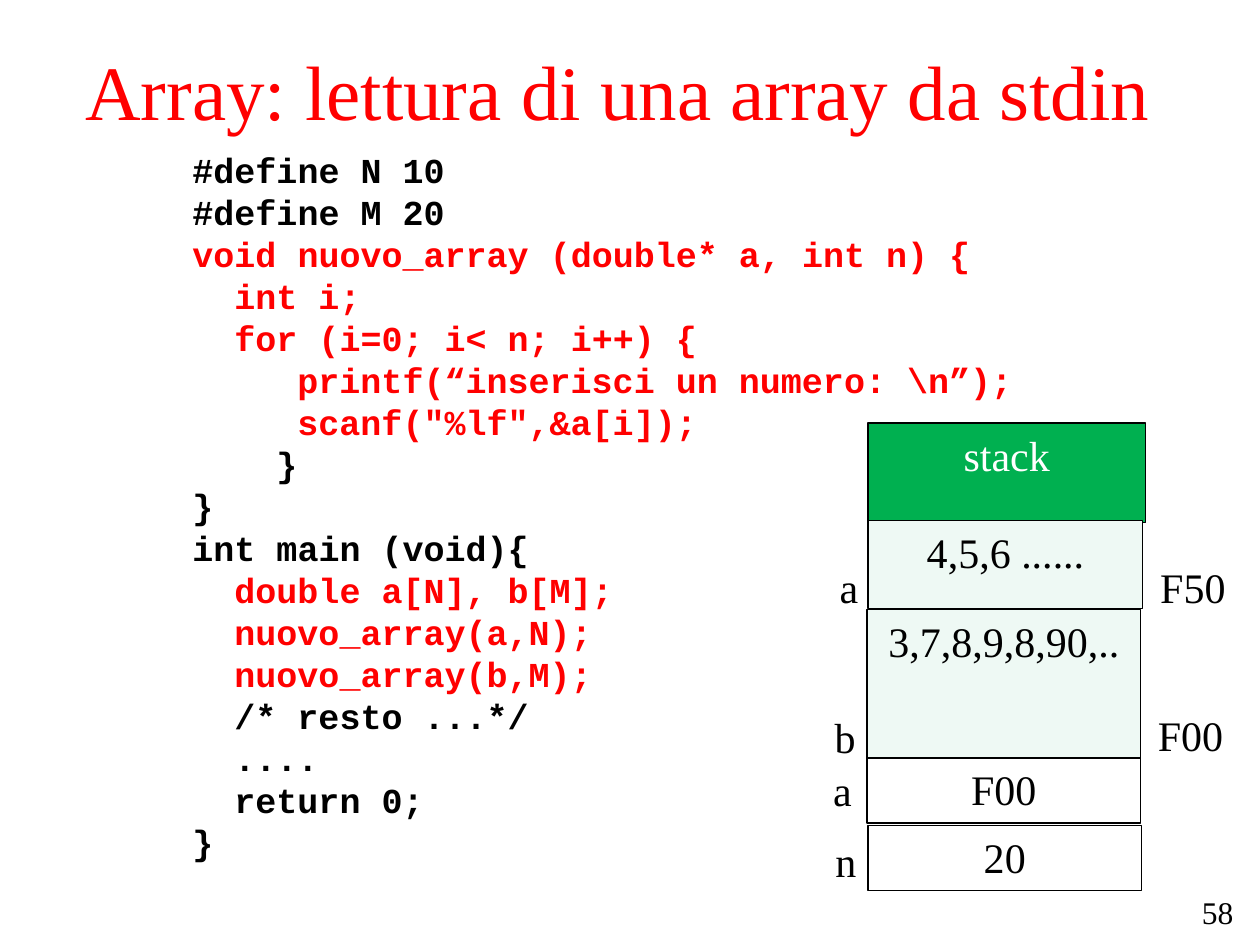
from pptx import Presentation
from pptx.dml.color import RGBColor
from pptx.enum.shapes import MSO_SHAPE
from pptx.enum.text import MSO_ANCHOR, PP_ALIGN
from pptx.util import Cm, Pt

COLOURS = {"black": "000000", "red": "FF0000", "white": "FFFFFF",
           "green": "00B050", "mint": "EEF9F4"}
SERIF, MONO = "Times New Roman", "Courier New"


def add_span(para, text, size, colour="black", font=SERIF):
    span = para.add_run()
    span.text = text
    span.font.name = font
    span.font.size = Pt(size)
    span.font.color.rgb = RGBColor.from_string(COLOURS[colour])
    return span


def add_text(page, place, text, size, align=PP_ALIGN.LEFT, colour="black"):
    box = page.shapes.add_textbox(*map(Cm, place))
    box.text_frame.word_wrap = True
    para = box.text_frame.paragraphs[0]
    para.alignment = align
    add_span(para, text, size, colour)
    return box


deck = Presentation()
deck.slide_width, deck.slide_height = Cm(25.4), Cm(19.05)
page = deck.slides.add_slide(deck.slide_layouts[6])

add_text(page, (23.98, 17.88, 1.17, 1.12), "58", 18)
title = add_text(page, (0, 0, 24.92, 3.61), "Array: lettura di una array da stdin",
                 44, PP_ALIGN.CENTER, "red")
title.text_frame.vertical_anchor = MSO_ANCHOR.MIDDLE

# Program listing: indent in characters, colour, text
code_lines = [
    (0, "black", "#define N 10"),
    (0, "black", "#define M 20"),
    (0, "red", "void nuovo_array (double* a, int n) {"),
    (2, "red", "int i;"),
    (2, "red", "for (i=0; i< n; i++) {"),
    (5, "red", "printf(“inserisci un numero: \\n”);"),
    (5, "red", 'scanf("%lf",&a[i]);'),
    (4, "black", "}"),
    (0, "black", "}"),
    (0, "black", "int main (void){"),
    (2, "red", "double a[N], b[M];"),
    (2, "red", "nuovo_array(a,N);"),
    (2, "red", "nuovo_array(b,M);"),
    (2, "black", "/* resto ...*/"),
    (2, "black", "...."),
    (2, "black", "return 0;"),
    (0, "black", "}"),
]
CODE_MARGIN, CHARACTER = Cm(2.54), Pt(12)
listing = page.shapes.add_textbox(Cm(1.09), Cm(2.79), Cm(24.89), Cm(15.82))
frame = listing.text_frame
frame.word_wrap = True
frame.margin_top = Cm(0.2)
for number, (indent, colour, text) in enumerate(code_lines):
    para = frame.add_paragraph() if number else frame.paragraphs[0]
    para.line_spacing = Pt(24)
    properties = para._p.get_or_add_pPr()
    properties.set("marL", str(CODE_MARGIN + indent * CHARACTER))
    properties.set("indent", "0")
    add_span(para, text, 20, colour, MONO).font.bold = True

# Stack cells: place, fill, text colour, text
cells = [
    ((17.5, 8.53, 5.59, 2.01), "green", "white", "stack"),
    ((17.5, 10.49, 5.54, 1.78), "mint", "black", "4,5,6 ......"),
    ((17.48, 12.29, 5.51, 3), "mint", "black", "3,7,8,9,8,90,.."),
    ((17.48, 15.27, 5.51, 1.32), None, "black", "F00"),
    ((17.5, 16.64, 5.51, 1.32), None, "black", "20"),
]
for place, fill, colour, text in cells:
    cell = page.shapes.add_shape(MSO_SHAPE.RECTANGLE, *map(Cm, place))
    cell.shadow.inherit = False
    if fill:
        cell.fill.solid()
        cell.fill.fore_color.rgb = RGBColor.from_string(COLOURS[fill])
    else:
        cell.fill.background()
    cell.line.color.rgb = RGBColor.from_string(COLOURS["black"])
    cell.line.width = Pt(0.75)
    cell.text_frame.word_wrap = True
    cell.text_frame.vertical_anchor = MSO_ANCHOR.TOP
    para = cell.text_frame.paragraphs[0]
    para.alignment = PP_ALIGN.CENTER
    add_span(para, text, 24, colour)

# Variable names to the left of the stack, addresses to the right
variables = [
    ((16.64, 11.2, 0.91, 1.17), "a"),
    ((15.82, 14.22, 1.68, 1.32), "b"),
    ((16.51, 15.29, 0.91, 1.17), "a"),
    ((16.59, 16.71, 0.91, 1.17), "n"),
]
for place, name in variables:
    add_text(page, place, name, 24, PP_ALIGN.RIGHT)

addresses = [((23.14, 11.2, 2.26, 1.19), "F50"),
             ((23.09, 14.17, 2.26, 1.19), "F00")]
for place, address in addresses:
    add_text(page, place, address, 24)

deck.save("out.pptx")
